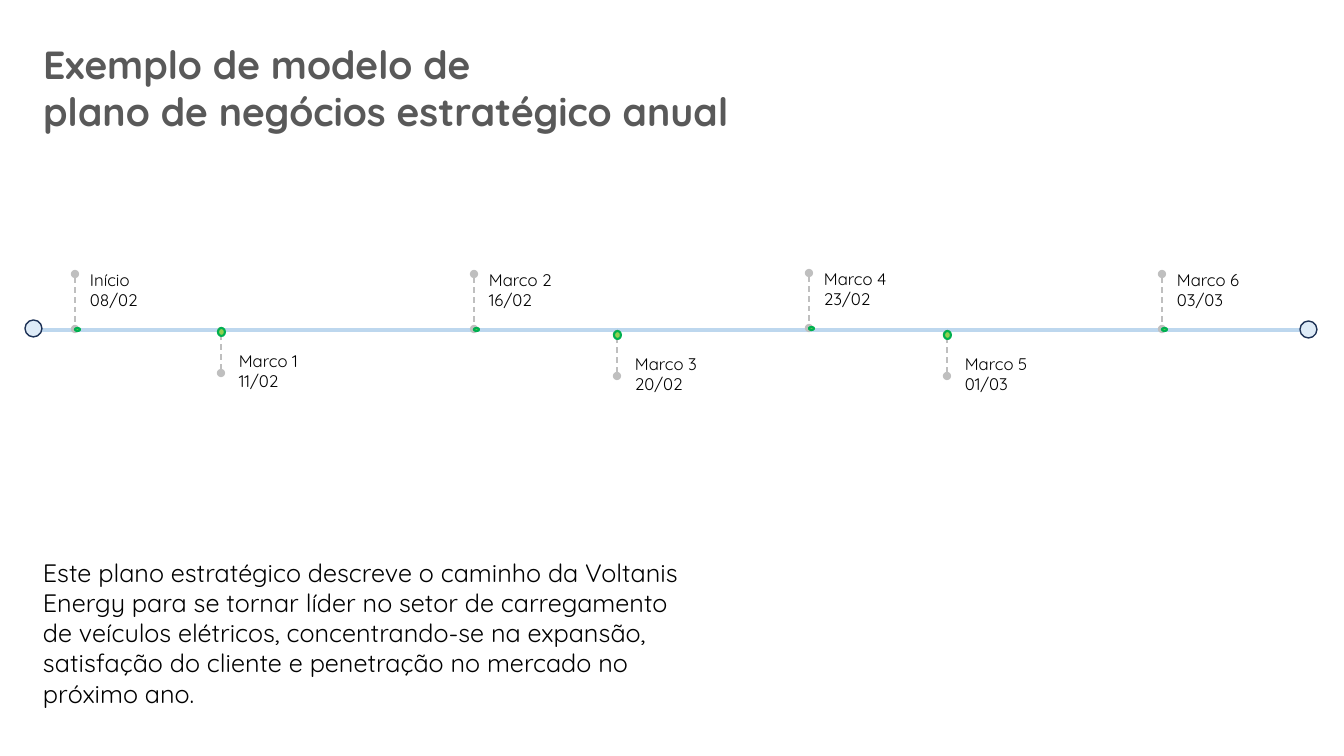
from pptx import Presentation
from pptx.dml.color import RGBColor
from pptx.enum.dml import MSO_LINE
from pptx.enum.shapes import MSO_CONNECTOR, MSO_SHAPE
from pptx.enum.text import MSO_ANCHOR, MSO_AUTO_SIZE, PP_ALIGN
from pptx.oxml.ns import qn
from pptx.util import Emu, Pt
from lxml.etree import SubElement

# Content
TITLE = "Exemplo de modelo de \vplano de negócios estratégico anual"
SUMMARY = (
    "Este plano estratégico descreve o caminho da Voltanis Energy para se "
    "tornar líder no setor de carregamento de veículos elétricos, "
    "concentrando-se na expansão, satisfação do cliente e penetração no "
    "mercado no próximo ano."
)
# Label, date, x of the stem, side of the axis, vertical shift
MILESTONES = [
    ("Início", "08/02", 75, "above", 0),
    ("Marco 1", "11/02", 221, "below", 0),
    ("Marco 2", "16/02", 474, "above", 0),
    ("Marco 3", "20/02", 617, "below", 3),
    ("Marco 4", "23/02", 809, "above", -1),
    ("Marco 5", "01/03", 947, "below", 3),
    ("Marco 6", "03/03", 1162, "above", 0),
]

# Format
PX = 914400 / 100.8
FONT = "Quicksand"
BLACK = RGBColor(0x00, 0x00, 0x00)
TITLE_GREY = RGBColor(0x59, 0x59, 0x59)
STEM_GREY = RGBColor(0xBF, 0xBF, 0xBF)
AXIS_BLUE = RGBColor(0xBD, 0xD7, 0xEE)
DOT_FILL = RGBColor(0x92, 0xD0, 0x50)
DOT_EDGE = RGBColor(0x00, 0xB0, 0x50)
END_FILL = RGBColor(0xDE, 0xEB, 0xF7)
END_EDGE = RGBColor(0x1E, 0x32, 0x56)

TITLE_FONT = {"name": FONT, "size": Pt(28), "bold": True}
SUMMARY_FONT = {"name": FONT, "size": Pt(18), "bold": False}
LABEL_FONT = {"name": FONT, "size": Pt(12), "bold": False}

# Per side: stem start and end, dot (dx, y, width, height),
# label (dx, y, width, height)
SIDES = {
    "above": {"stem": (274, 329), "dot": (0, 328, 5, 3),
              "label": (5, 265, 114, 62)},
    "below": {"stem": (373, 331), "dot": (-3, 328, 7, 8),
              "label": (8, 346, 112, 50)},
}
AXIS = (33, 1312, 330)
END_CIRCLES = [(25, 320), (1300, 321)]
END_SIZE = 17


def emu(*lengths):
    return [Emu(round(length * PX)) for length in lengths]


def write(frame, lines, font, color):
    frame.word_wrap = True
    frame.auto_size = MSO_AUTO_SIZE.NONE
    frame.vertical_anchor = MSO_ANCHOR.TOP
    for index, line in enumerate(lines):
        para = frame.add_paragraph() if index else frame.paragraphs[0]
        para.text = line
        para.alignment = PP_ALIGN.LEFT
        for span in para.runs:
            for key, value in font.items():
                setattr(span.font, key, value)
            span.font.color.rgb = color


def add_text(page, place, lines, font):
    box = page.shapes.add_textbox(*emu(*place))
    write(box.text_frame, lines, font, BLACK)


def add_line(page, ends, color, width):
    connector = page.shapes.add_connector(MSO_CONNECTOR.STRAIGHT, *emu(*ends))
    connector.line.color.rgb = color
    connector.line.width = Pt(width)
    SubElement(connector.element.spPr, qn("a:effectLst"))
    return connector


def add_circle(page, place, fill, edge, width):
    circle = page.shapes.add_shape(MSO_SHAPE.OVAL, *emu(*place))
    circle.shadow.inherit = False
    circle.fill.solid()
    circle.fill.fore_color.rgb = fill
    circle.line.color.rgb = edge
    circle.line.width = Pt(width)


def add_milestone(page, label, date, x, side, shift):
    layout = SIDES[side]
    dx, y, width, height = layout["label"]
    add_text(page, (x + dx, y + shift, width, height), [label, date], LABEL_FONT)

    start, end = layout["stem"]
    stem = add_line(page, (x, start + shift, x, end + shift), STEM_GREY, 1)
    stem.line.dash_style = MSO_LINE.DASH
    for tag in ("a:headEnd", "a:tailEnd"):
        SubElement(stem.line._get_or_add_ln(), qn(tag), type="oval")

    dx, y, width, height = layout["dot"]
    add_circle(page, (x + dx, y + shift, width, height), DOT_FILL, DOT_EDGE, 1.5)


def main():
    deck = Presentation()
    deck.slide_width, deck.slide_height = emu(1344, 756)
    page = deck.slides.add_slide(deck.slide_layouts[5])

    # Title and summary
    title = page.shapes.title
    title.left, title.top, title.width, title.height = emu(33, 35, 814, 105)
    write(title.text_frame, [TITLE], TITLE_FONT, TITLE_GREY)
    add_text(page, (33, 552, 672, 162), [SUMMARY], SUMMARY_FONT)

    # Timeline
    left, right, y = AXIS
    add_line(page, (left, y, right, y), AXIS_BLUE, 2.25)
    for milestone in MILESTONES:
        add_milestone(page, *milestone)
    for x, y in END_CIRCLES:
        add_circle(page, (x, y, END_SIZE, END_SIZE), END_FILL, END_EDGE, 1)

    deck.save("out.pptx")


if __name__ == "__main__":
    main()
